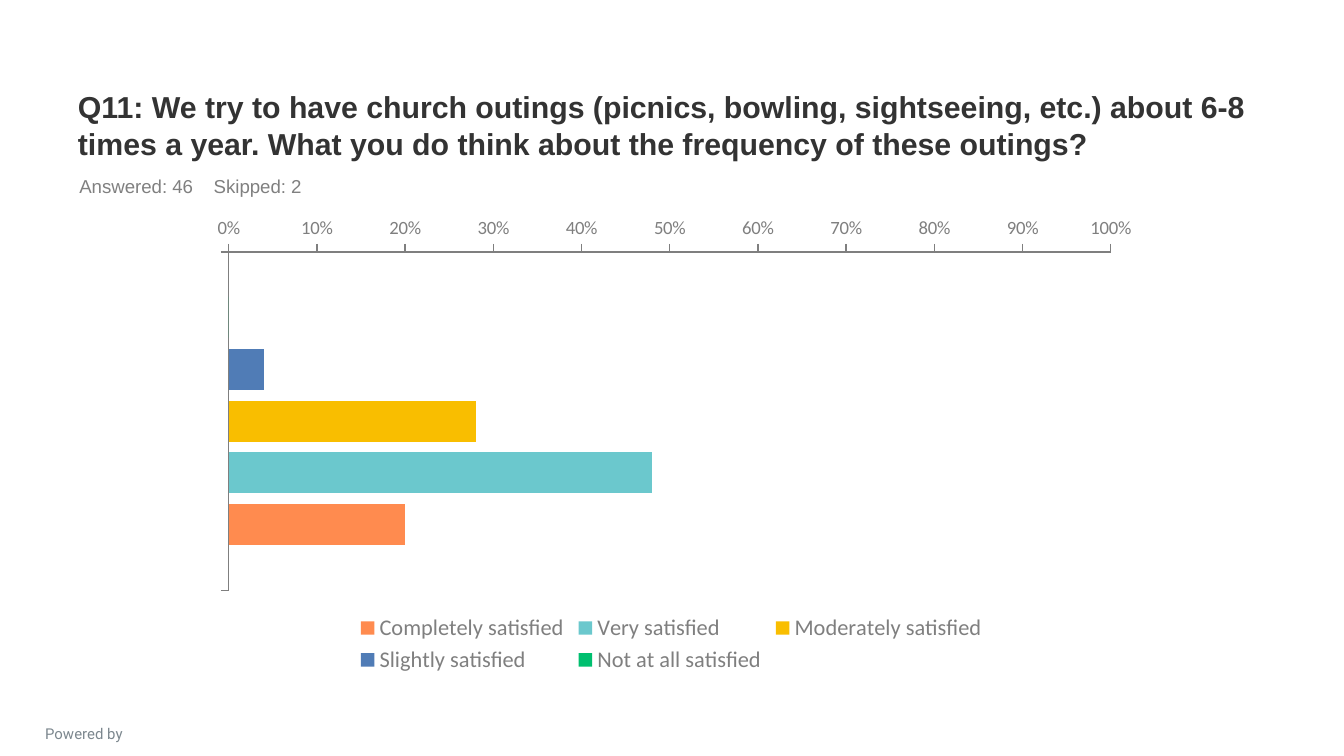
from dataclasses import dataclass

from lxml import etree
from pptx import Presentation
from pptx.chart.data import CategoryChartData
from pptx.dml.color import RGBColor
from pptx.enum.chart import (XL_AXIS_CROSSES, XL_CHART_TYPE, XL_LEGEND_POSITION,
                             XL_TICK_LABEL_POSITION, XL_TICK_MARK)
from pptx.enum.text import MSO_ANCHOR, MSO_AUTO_SIZE, PP_ALIGN
from pptx.oxml.ns import qn
from pptx.util import Inches, Pt

BAR_CLUSTERED = XL_CHART_TYPE.BAR_CLUSTERED
LEGEND_BOTTOM = XL_LEGEND_POSITION.BOTTOM
CROSSES_MINIMUM = XL_AXIS_CROSSES.MINIMUM
LABELS_LOW = XL_TICK_LABEL_POSITION.LOW
TICK_OUTSIDE = XL_TICK_MARK.OUTSIDE
TICK_NONE = XL_TICK_MARK.NONE
ANCHOR_BOTTOM = MSO_ANCHOR.BOTTOM
NO_AUTOFIT = MSO_AUTO_SIZE.NONE
ALIGN_LEFT = PP_ALIGN.LEFT
ALIGN_CENTER = PP_ALIGN.CENTER


@dataclass(frozen=True)
class Theme:
    title_color: str = "333333"
    subtitle_color: str = "808080"
    axis_color: str = "7F7F7F"
    footer_color: str = "7C878E"
    text_font: str = "Arial"
    chart_font: str = "Calibri"
    footer_font: str = "Roboto"
    title_size: float = 16.2
    subtitle_size: float = 10
    chart_size: float = 18
    axis_size: float = 10
    legend_size: float = 12
    footer_size: float = 8


theme = Theme()

# Series name, share of answers, bar colour
ANSWERS = [
    ("Not at all satisfied", 0, "00BF6F"),
    ("Slightly satisfied", 0.04, "507CB6"),
    ("Moderately satisfied", 0.28, "F9BE00"),
    ("Very satisfied", 0.48, "6BC8CD"),
    ("Completely satisfied", 0.2, "FF8B4F"),
]


def set_font(font, name, size, color, bold=False):
    font.name = name
    font.size = Pt(size)
    font.bold = bold
    font.color.rgb = RGBColor.from_string(color)


def place(shape, left, top, width, height):
    shape.left, shape.top = Inches(left), Inches(top)
    shape.width, shape.height = Inches(width), Inches(height)


# Widescreen, 16:9
presentation = Presentation()
presentation.slide_width = Inches(10)
presentation.slide_height = Inches(10 * 9 / 16)
slide = presentation.slides.add_slide(presentation.slide_layouts[1])

# Footer
footer = slide.shapes.add_textbox(Inches(0.05), Inches(5.34), Inches(1.15), Inches(0.18))
footer.text_frame.word_wrap = True
paragraph = footer.text_frame.paragraphs[0]
paragraph.text = "Powered by"
paragraph.alignment = ALIGN_CENTER
set_font(paragraph.font, theme.footer_font, theme.footer_size, theme.footer_color)

# Question
title = slide.shapes.title
place(title, 0.48, 0.65, 9, 0.6)
title.text_frame.auto_size = NO_AUTOFIT
title.text_frame.vertical_anchor = ANCHOR_BOTTOM
paragraph = title.text_frame.paragraphs[0]
paragraph.text = ("Q11: We try to have church outings (picnics, bowling, sightseeing, etc.) "
                  "about 6-8 times a year. What you do think about the frequency of these outings?")
paragraph.alignment = ALIGN_LEFT
set_font(paragraph.font, theme.text_font, theme.title_size, theme.title_color, bold=True)

# Response counts, the second one on a tab stop
counts = slide.placeholders[1]
place(counts, 0.49, 1.25, 9, 0.26)
counts.text_frame.auto_size = NO_AUTOFIT
paragraph = counts.text_frame.paragraphs[0]
paragraph.text = "Answered: 46\tSkipped: 2"
properties = paragraph._p.get_or_add_pPr()
properties.set("marL", "0")
properties.set("indent", "0")
etree.SubElement(properties, qn("a:buNone"))
tab_list = etree.SubElement(properties, qn("a:tabLst"))
etree.SubElement(tab_list, qn("a:tab"), pos=str(Inches(0.93)), algn="l")
paragraph.space_before = Pt(0)
set_font(paragraph.font, theme.text_font, theme.subtitle_size, theme.subtitle_color)

# Satisfaction chart
chart_data = CategoryChartData(number_format="0%")
chart_data.categories = [" "]
for name, share, color in ANSWERS:
    chart_data.add_series(name, [share])
chart = slide.shapes.add_chart(BAR_CLUSTERED, Inches(1.43), Inches(1.55),
                               Inches(7.13), Inches(3.5), chart_data).chart
chart.has_title = False
set_font(chart.font, theme.chart_font, theme.chart_size, theme.title_color)

plot = chart.plots[0]
plot.vary_by_categories = False
plot.gap_width = 219
plot.overlap = -27
for series, (name, share, color) in zip(plot.series, ANSWERS):
    series.invert_if_negative = False
    series.format.fill.solid()
    series.format.fill.fore_color.rgb = RGBColor.from_string(color)

for axis in (chart.category_axis, chart.value_axis):
    axis.has_major_gridlines = False
    axis.major_tick_mark = TICK_OUTSIDE
    axis.minor_tick_mark = TICK_NONE
    axis.format.line.width = Pt(0.75)
    axis.format.line.color.rgb = RGBColor.from_string(theme.axis_color)
    set_font(axis.tick_labels.font, theme.chart_font, theme.axis_size, theme.axis_color)

chart.category_axis.reverse_order = True
chart.category_axis.crosses = CROSSES_MINIMUM
chart.category_axis.tick_label_position = LABELS_LOW
chart.value_axis.minimum_scale = 0
chart.value_axis.maximum_scale = 1
chart.value_axis.major_unit = 0.1
chart.value_axis.tick_labels.number_format = "0%"
chart.value_axis.tick_labels.number_format_is_linked = False

chart.has_legend = True
chart.legend.position = LEGEND_BOTTOM
chart.legend.include_in_layout = False
set_font(chart.legend.font, theme.chart_font, theme.legend_size, theme.axis_color)

presentation.save("out.pptx")
